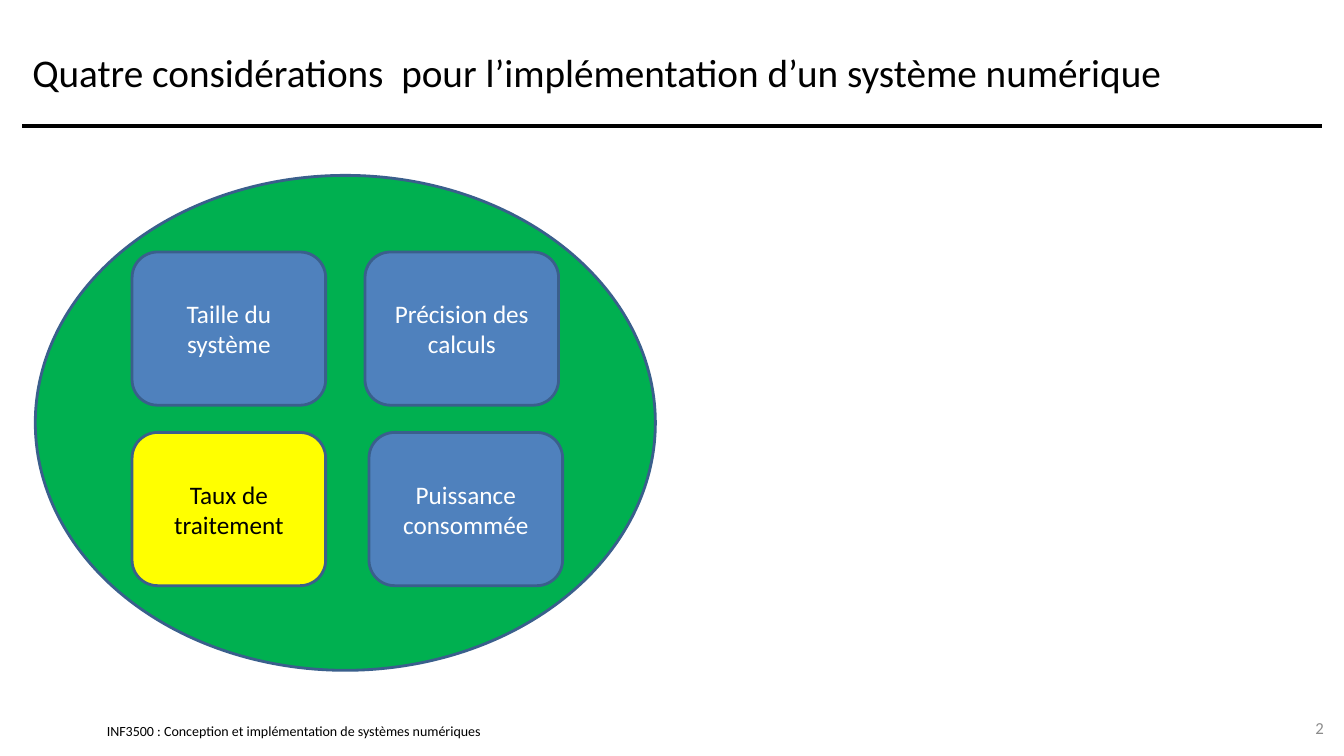
from lxml import etree
from pptx import Presentation
from pptx.dml.color import RGBColor
from pptx.enum.shapes import MSO_CONNECTOR, MSO_SHAPE
from pptx.enum.text import MSO_ANCHOR, PP_ALIGN
from pptx.oxml.ns import qn
from pptx.util import Inches, Pt

LEFT, CENTER, RIGHT = PP_ALIGN.LEFT, PP_ALIGN.CENTER, PP_ALIGN.RIGHT
MIDDLE = MSO_ANCHOR.MIDDLE
OVAL, ROUNDED = MSO_SHAPE.OVAL, MSO_SHAPE.ROUNDED_RECTANGLE
STRAIGHT = MSO_CONNECTOR.STRAIGHT

FONT = "Calibri"
COLORS = {
    "black": "000000",
    "white": "FFFFFF",
    "gray": "8C8C8C",
    "green": "00B050",
    "blue": "4F81BD",
    "yellow": "FFFF00",
    "outline": "3A5F8C",
}

# Slide frame and grid of boxes, in inches
SLIDE_W, SLIDE_H = 13.33, 7.5
MARGIN, RULE_Y = 0.22, 1.25
CONTENT_W = SLIDE_W - 2 * MARGIN
GRID_X, GRID_Y = 1.31, 2.5
COL_STEP, ROW_STEP = 2.31, 1.79
BOX_W, BOX_H = 1.92, 1.52

# Label, column, row, shift to the right, fill, text colour
CONSIDERATIONS = [
    ("Précision des calculs", 1, 0, 0, "blue", "white"),
    ("Puissance consommée", 1, 1, 0.04, "blue", "white"),
    ("Taille du système", 0, 0, 0, "blue", "white"),
    ("Taux de traitement", 0, 1, 0, "yellow", "black"),
]


def rgb(name):
    return RGBColor.from_string(COLORS[name])


def box(*lengths):
    return [Inches(v) for v in lengths]


def write(s, text, size, color, align=LEFT):
    tf = s.text_frame
    tf.word_wrap = True
    tf.vertical_anchor = MIDDLE
    tf.text = text
    p = tf.paragraphs[0]
    p.alignment = align
    font = p.runs[0].font
    font.name, font.size = FONT, Pt(size)
    font.color.rgb = rgb(color)


def add_title(s, text):
    title = s.shapes.title
    title.left, title.top, title.width, title.height = box(
        MARGIN, 0.17, CONTENT_W, RULE_Y - 0.17)
    write(title, text, 28, "black")


def add_rule(s):
    line = s.shapes.add_connector(
        STRAIGHT, *box(MARGIN, RULE_Y, MARGIN + CONTENT_W, RULE_Y))
    line.line.color.rgb = rgb("black")
    line.line.width = Pt(3)
    etree.SubElement(line._element.spPr, qn("a:effectLst"))


def add_text(s, at, text, size, color, align=LEFT, inset=True):
    tb = s.shapes.add_textbox(*box(*at))
    write(tb, text, size, color, align)
    if not inset:
        tf = tb.text_frame
        tf.margin_left = tf.margin_right = tf.margin_top = tf.margin_bottom = 0


def add_outlined(s, kind, at, fill):
    sp = s.shapes.add_shape(kind, *box(*at))
    sp.shadow.inherit = False
    sp.fill.solid()
    sp.fill.fore_color.rgb = rgb(fill)
    sp.line.color.rgb = rgb("outline")
    sp.line.width = Pt(2)
    return sp


def main():
    prs = Presentation()
    prs.slide_width, prs.slide_height = box(SLIDE_W, SLIDE_H)
    s = prs.slides.add_slide(prs.slide_layouts[5])

    # Heading and footer
    add_title(s, "Quatre considérations  pour l’implémentation d’un système numérique")
    add_rule(s)
    add_text(s, (1.06, 7.17, 5.11, 0.17),
             "INF3500 : Conception et implémentation de systèmes numériques",
             10, "black", inset=False)
    add_text(s, (12.56, 7.02, 0.67, 0.4), "2", 12, "gray", RIGHT)

    # Oval holding the four considerations
    add_outlined(s, OVAL, (0.35, 1.74, 6.15, 4.91), "green")
    for label, col, row, shift, fill, color in CONSIDERATIONS:
        at = (GRID_X + col * COL_STEP + shift, GRID_Y + row * ROW_STEP, BOX_W, BOX_H)
        write(add_outlined(s, ROUNDED, at, fill), label, 18, color, CENTER)

    prs.save("out.pptx")


if __name__ == "__main__":
    main()
